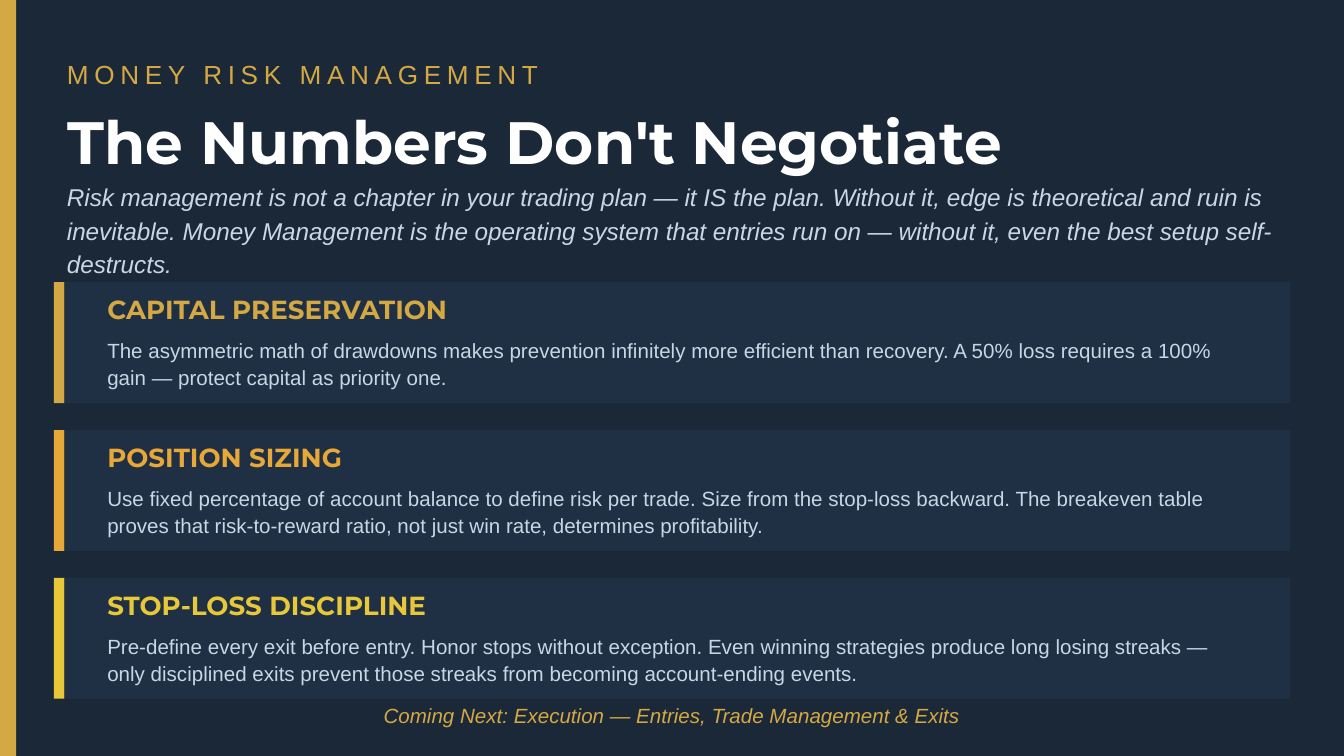
from pptx import Presentation
from pptx.dml.color import RGBColor
from pptx.enum.shapes import MSO_SHAPE
from pptx.enum.text import MSO_ANCHOR, MSO_AUTO_SIZE, PP_ALIGN
from pptx.util import Inches, Pt

RECTANGLE = MSO_SHAPE.RECTANGLE
MIDDLE = MSO_ANCHOR.MIDDLE
NO_AUTOFIT = MSO_AUTO_SIZE.NONE
LEFT, CENTER = PP_ALIGN.LEFT, PP_ALIGN.CENTER

NAVY = RGBColor(0x1B, 0x28, 0x38)
PANEL = RGBColor(0x1F, 0x30, 0x44)
GOLD = RGBColor(0xD4, 0xA8, 0x43)
AMBER = RGBColor(0xE8, 0xA8, 0x38)
YELLOW = RGBColor(0xE8, 0xC8, 0x38)
PALE = RGBColor(0xC8, 0xD6, 0xE5)
WHITE = RGBColor(0xFF, 0xFF, 0xFF)

HEADING_FONT, BODY_FONT = "Montserrat", "Arial"

EYEBROW = "MONEY RISK MANAGEMENT"
TITLE = "The Numbers Don't Negotiate"
INTRO = (
    "Risk management is not a chapter in your trading plan — it IS the plan. "
    "Without it, edge is theoretical and ruin is inevitable. Money Management is "
    "the operating system that entries run on — without it, even the best setup "
    "self-destructs."
)
PILLARS = [
    ("CAPITAL PRESERVATION", GOLD,
     "The asymmetric math of drawdowns makes prevention infinitely more efficient "
     "than recovery. A 50% loss requires a 100% gain — protect capital as priority one."),
    ("POSITION SIZING", AMBER,
     "Use fixed percentage of account balance to define risk per trade. Size from the "
     "stop-loss backward. The breakeven table proves that risk-to-reward ratio, not "
     "just win rate, determines profitability."),
    ("STOP-LOSS DISCIPLINE", YELLOW,
     "Pre-define every exit before entry. Honor stops without exception. Even winning "
     "strategies produce long losing streaks — only disciplined exits prevent those "
     "streaks from becoming account-ending events."),
]
NEXT_UP = "Coming Next: Execution — Entries, Trade Management & Exits"

SLIDE_W = 10
SLIDE_H = SLIDE_W * 9 / 16
MARGIN = 0.4
CONTENT_W = SLIDE_W - 2 * MARGIN
ACCENT_W = 0.08
CARD_TOP, CARD_H, CARD_GAP = 2.1, 0.9, 0.2
CARD_TEXT_X, CARD_TEXT_W = 0.7, 8.7


def format_text(shape, text, size, color, font=BODY_FONT, bold=False, italic=False,
                align=LEFT, line_spacing=None):
    frame = shape.text_frame
    frame.text = text
    frame.word_wrap = True
    frame.auto_size = NO_AUTOFIT
    frame.vertical_anchor = MIDDLE
    paragraph = frame.paragraphs[0]
    paragraph.alignment = align
    if line_spacing:
        paragraph.line_spacing = line_spacing
    paragraph.font.name = font
    paragraph.font.size = Pt(size)
    paragraph.font.bold = bold
    paragraph.font.italic = italic
    paragraph.font.color.rgb = color


def add_text(slide, box, text, size, color, **style):
    textbox = slide.shapes.add_textbox(*map(Inches, box))
    format_text(textbox, text, size, color, **style)
    return textbox


def add_block(slide, box, color):
    block = slide.shapes.add_shape(RECTANGLE, *map(Inches, box))
    block.shadow.inherit = False
    block.fill.solid()
    block.fill.fore_color.rgb = color
    block.line.fill.background()


def add_pillar(slide, top, heading, color, detail):
    add_block(slide, (MARGIN, top, ACCENT_W, CARD_H), color)
    add_block(slide, (MARGIN + ACCENT_W, top, CONTENT_W - ACCENT_W, CARD_H), PANEL)
    add_text(slide, (CARD_TEXT_X, top + 0.05, CARD_TEXT_W, 0.3), heading, 14, color,
             font=HEADING_FONT, bold=True)
    add_text(slide, (CARD_TEXT_X, top + 0.35, CARD_TEXT_W, 0.5), detail, 11, PALE,
             line_spacing=1.1)


def main():
    prs = Presentation()
    prs.slide_width, prs.slide_height = Inches(SLIDE_W), Inches(SLIDE_H)
    title_only = prs.slide_layouts.get_by_name("Title Only")
    slide = prs.slides.add_slide(title_only)
    slide.background.fill.solid()
    slide.background.fill.fore_color.rgb = NAVY

    add_block(slide, (0, 0, 0.12, SLIDE_H), GOLD)

    eyebrow = add_text(slide, (MARGIN, 0.3, 9, 0.5), EYEBROW, 14, GOLD)
    letter_spacing = str(3 * 100)  # hundredths of a point
    run = eyebrow.text_frame.paragraphs[0].runs[0]
    run.font._element.set("spc", letter_spacing)

    title = slide.shapes.title
    title.left, title.top, title.width, title.height = map(Inches, (MARGIN, 0.75, 9, 0.6))
    format_text(title, TITLE, 32, WHITE, font=HEADING_FONT, bold=True)

    add_text(slide, (MARGIN, 1.35, CONTENT_W, 0.7), INTRO, 13, PALE,
             italic=True, line_spacing=1.15)

    for row, pillar in enumerate(PILLARS):
        add_pillar(slide, CARD_TOP + row * (CARD_H + CARD_GAP), *pillar)

    add_text(slide, (MARGIN, 5.15, CONTENT_W, 0.35), NEXT_UP, 11, GOLD,
             italic=True, align=CENTER)

    prs.save("out.pptx")


if __name__ == "__main__":
    main()
